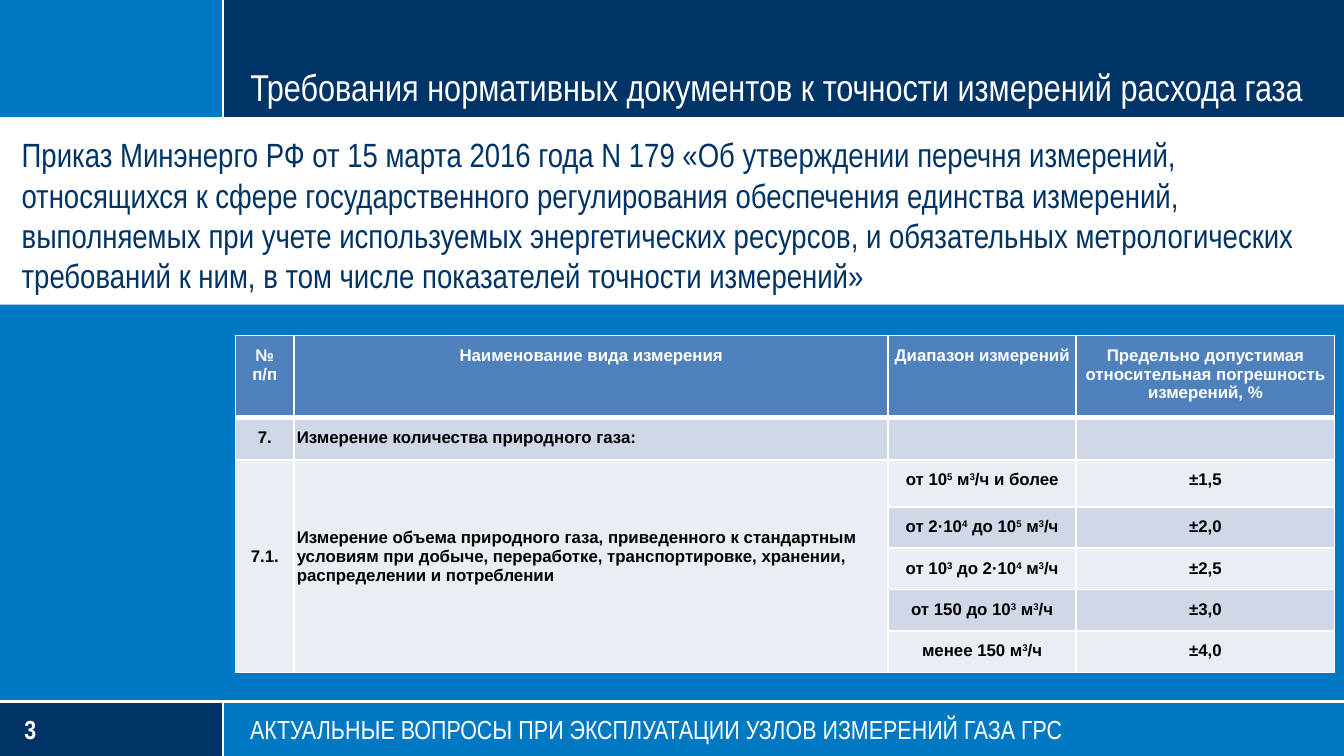
from dataclasses import dataclass
from lxml.etree import SubElement as Sub
from pptx import Presentation
from pptx.dml.color import RGBColor as Rgb
from pptx.enum.shapes import MSO_CONNECTOR as Link, MSO_SHAPE as Kind
from pptx.enum.text import MSO_ANCHOR as Anchor, PP_ALIGN as Align
from pptx.oxml.ns import qn
from pptx.util import Cm, Pt


@dataclass(frozen=True)
class Theme:
    navy: str = "003366"
    blue: str = "0079C2"
    white: str = "FFFFFF"
    black: str = "000000"
    head: str = "4F81BD"
    dark: str = "D0D8E8"
    light: str = "E9EDF4"
    narrow: str = "Arial Narrow"
    plain: str = "Arial"
    title: int = 20
    body: int = 18
    foot: int = 14
    cell: int = 9
    rule: float = 1.25
    grid: int = 1
    thick: int = 3


def put(item, values):
    for name, value in values.items():
        setattr(item, name, value)


class Deck:
    def __init__(self, theme, width, height):
        self.theme = theme
        self.show = Presentation()
        put(self.show, {"slide_width": Cm(width), "slide_height": Cm(height)})
        self.slide = self.show.slides.add_slide(self.show.slide_layouts[5])
        self.shapes = self.slide.shapes

    def rect(self, box, color):
        shape = self.shapes.add_shape(Kind.RECTANGLE, *map(Cm, box))
        shape.shadow.inherit = False
        shape.fill.solid()
        shape.fill.fore_color.rgb = Rgb.from_string(color)
        shape.line.fill.background()

    def rule(self, *ends):
        line = self.shapes.add_connector(Link.STRAIGHT, *map(Cm, ends))
        line.line.color.rgb = Rgb.from_string(self.theme.white)
        line.line.width = Pt(self.theme.rule)
        Sub(line._element.spPr, qn("a:effectLst"))

    def words(self, par, text, size, color, face, bold=False, align=Align.LEFT):
        par.alignment = align
        for spot, part in enumerate(text.split("^")):
            if part:
                run = par.add_run()
                run.text = part
                put(run.font, {"size": Pt(size), "name": face, "bold": bold})
                run.font.color.rgb = Rgb.from_string(color)
                if spot % 2:
                    run.font._element.set("baseline", "30000")

    def fill(self, shape, text, size, color, anchor, bold=False):
        frame = shape.text_frame
        put(frame, {"margin_left": 0, "margin_right": 0, "margin_top": 0,
                    "margin_bottom": 0, "word_wrap": True,
                    "vertical_anchor": anchor})
        self.words(frame.paragraphs[0], text, size, color, self.theme.narrow, bold)

    def text(self, box, *style):
        self.fill(self.shapes.add_textbox(*map(Cm, box)), *style)

    def title(self, box, text):
        shape = self.shapes.title
        put(shape, dict(zip(("left", "top", "width", "height"), map(Cm, box))))
        self.fill(shape, text, self.theme.title, self.theme.white, Anchor.BOTTOM)
        tree = shape._element.getparent()
        tree.append(shape._element)

    def edge(self, cell, tag, width):
        line = Sub(cell._tc.get_or_add_tcPr(), qn(tag), w=str(Pt(width)))
        paint = Sub(line, qn("a:solidFill"))
        Sub(paint, qn("a:srgbClr"), val=self.theme.white)

    def cell(self, cell, text, row, col, tall):
        look = self.theme
        top = row == 0
        wide = {"a:lnT": row == 1, "a:lnB": top}
        for tag in ("a:lnL", "a:lnR", "a:lnT", "a:lnB"):
            self.edge(cell, tag, look.thick if wide.get(tag) else look.grid)
        shade = look.head if top else look.dark if row % 2 else look.light
        cell.fill.solid()
        cell.fill.fore_color.rgb = Rgb.from_string(shade)
        put(cell, {"margin_left": Cm(0.05), "margin_right": Cm(0.05),
                   "margin_top": Cm(0.2), "margin_bottom": Cm(0.56 if tall else 0.2),
                   "vertical_anchor": Anchor.MIDDLE if tall else Anchor.TOP})
        frame = cell.text_frame
        align = Align.LEFT if col == 1 and not top else Align.CENTER
        color = look.white if top else look.black
        for spot, part in enumerate(text.split("\n")):
            par = frame.add_paragraph() if spot else frame.paragraphs[0]
            self.words(par, part, look.cell, color, look.plain, True, align)
            Sub(par._p, qn("a:endParaRPr"), sz=str(look.cell * 100))

    def table(self, spot, cols, rows, data, tall):
        box = (*spot, sum(cols), sum(rows))
        grid = self.shapes.add_table(len(rows), len(cols), *map(Cm, box)).table
        put(grid, {"first_row": False, "horz_banding": False})
        for col, width in zip(grid.columns, cols):
            col.width = Cm(width)
        for row, height in zip(grid.rows, rows):
            row.height = Cm(height)
        for r, line in enumerate(data):
            for c, text in enumerate(line):
                self.cell(grid.cell(r, c), text, r, c, (r, c) in tall)
        for r, c in tall:
            grid.cell(r, c).merge(grid.cell(len(rows) - 1, c))


def main():
    look = Theme()
    wide, high = 25.4, 14.29
    side, top, base = 4.22, 2.23, 13.26
    left, span = 4.73, 20.22
    deck = Deck(look, wide, high)
    for box, color in (
        ((0, 5.76, wide, high - 5.76), look.blue),
        ((0, 0, wide, top), look.navy),
        ((0, 0, side, top), look.blue),
        ((0, base, side, high - base), look.navy),
    ):
        deck.rect(box, color)
    for ends in ((0, base, wide, base), (side, base, side, high),
                 (side, 0, side, top), (0, top, wide, top)):
        deck.rule(*ends)
    deck.text((0.46, 13.48, 2.57, 0.62), "3", look.foot, look.white,
              Anchor.MIDDLE, True)
    deck.text((0.41, 2.54, 24.52, 3.22),
              "Приказ Минэнерго РФ от 15 марта 2016 года N 179 «Об утверждении "
              "перечня измерений, относящихся к сфере государственного "
              "регулирования обеспечения единства измерений, выполняемых при "
              "учете используемых энергетических ресурсов, и обязательных "
              "метрологических требований к ним, в том числе показателей "
              "точности измерений»", look.body, look.navy, Anchor.TOP)
    deck.title((left, 0, span, 2.06),
               "Требования нормативных документов к точности измерений расхода газа")
    deck.text((left, 13.48, span, 0.62),
              "АКТУАЛЬНЫЕ ВОПРОСЫ ПРИ ЭКСПЛУАТАЦИИ УЗЛОВ ИЗМЕРЕНИЙ ГАЗА ГРС",
              look.foot, look.white, Anchor.MIDDLE)
    data = (
        ("№\nп/п", "Наименование вида измерения", "Диапазон измерений",
         "Предельно допустимая относительная погрешность измерений, %"),
        ("7.", "Измерение количества природного газа:", "", ""),
        ("7.1.", "Измерение объема природного газа, приведенного к стандартным "
         "условиям при добыче, переработке, транспортировке, хранении, "
         "распределении и потреблении", "от 10^5^ м^3^/ч и более", "±1,5"),
        ("", "", "от 2·10^4^ до 10^5^ м^3^/ч", "±2,0"),
        ("", "", "от 10^3^ до 2·10^4^ м^3^/ч", "±2,5"),
        ("", "", "от 150 до 10^3^ м^3^/ч", "±3,0"),
        ("", "", "менее 150 м^3^/ч", "±4,0"),
    )
    deck.table((4.45, 6.34), (1.11, 11.22, 3.56, 4.88),
               (1.55, 0.8, 0.89, *[0.78] * 4), data, ((2, 0), (2, 1)))
    deck.show.save("out.pptx")


if __name__ == "__main__":
    main()
